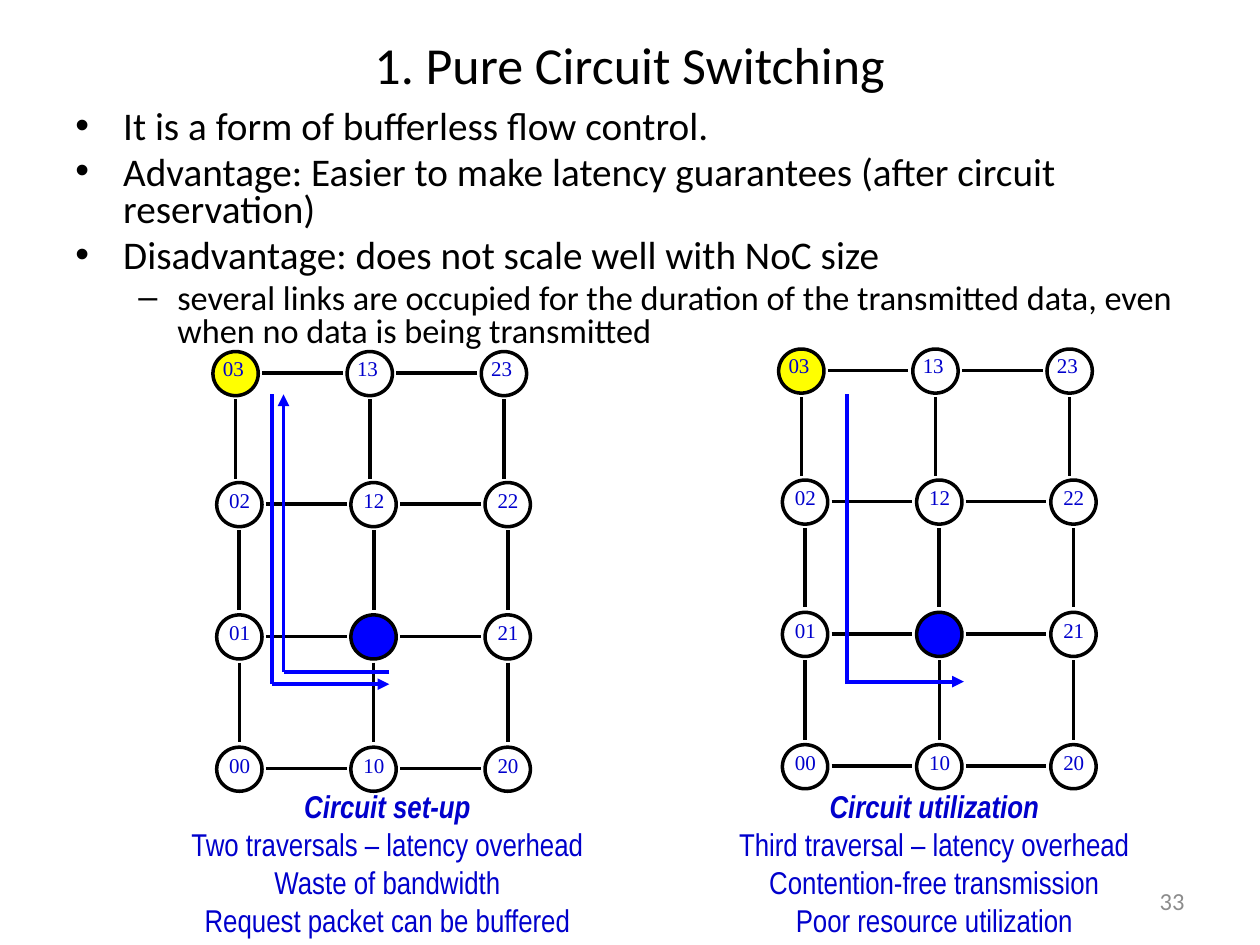
from dataclasses import dataclass

from lxml import etree
from pptx import Presentation
from pptx.dml.color import RGBColor
from pptx.enum.shapes import MSO_CONNECTOR, MSO_SHAPE
from pptx.enum.text import MSO_ANCHOR, PP_ALIGN
from pptx.oxml.ns import qn
from pptx.util import Inches, Pt

LINE, OVAL = MSO_CONNECTOR.STRAIGHT, MSO_SHAPE.OVAL
LEFT, CENTER, RIGHT = PP_ALIGN.LEFT, PP_ALIGN.CENTER, PP_ALIGN.RIGHT
TOP, MIDDLE = MSO_ANCHOR.TOP, MSO_ANCHOR.MIDDLE

BLACK = RGBColor(0x00, 0x00, 0x00)
GRAY = RGBColor(0x8C, 0x8C, 0x8C)
BLUE = RGBColor(0x00, 0x00, 0xFF)
TEXT_BLUE = RGBColor(0x00, 0x00, 0xCC)
YELLOW = RGBColor(0xFF, 0xFF, 0x00)

COLS, ROWS = 3, 4
COL_STEP, ROW_STEP = 1.065, 1.05
NODE_W, NODE_H = 0.36, 0.35
TOP_ROW_DX, TOP_ROW_DY = -0.03, 0.01
TARGET = "11"
NODE_FILLS = {"03": YELLOW, TARGET: BLUE}


@dataclass(frozen=True)
class Segment:
    x1: float
    y1: float
    x2: float
    y2: float
    arrow: bool = False


@dataclass(frozen=True)
class Mesh:
    left: float
    top: float
    routes: tuple[Segment, ...]
    caption_left: float
    caption: tuple[str, ...]


@dataclass(frozen=True)
class Bullet:
    text: str
    level: int = 0


@dataclass(frozen=True)
class BulletStyle:
    char: str
    size: float
    margin: float
    hanging: float


BULLET_STYLES = (BulletStyle("•", 22.4, 0.38, 0.38), BulletStyle("–", 19.6, 0.81, 0.31))

BULLETS = (
    Bullet("It is a form of bufferless flow control."),
    Bullet("Advantage: Easier to make latency guarantees (after circuit reservation)"),
    Bullet("Disadvantage: does not scale well with NoC size"),
    Bullet("several links are occupied for the duration of the transmitted data, "
           "even when no data is being transmitted", 1),
)

MESHES = (
    Mesh(1.72, 2.78,
         (Segment(2.16, 3.13, 2.16, 5.43), Segment(2.16, 5.43, 3.09, 5.43, True),
          Segment(3.09, 5.33, 2.25, 5.33), Segment(2.25, 5.33, 2.25, 3.13, True)),
         1.4, ("Circuit set-up", "Two traversals – latency overhead",
               "Waste of bandwidth", "Request packet can be buffered")),
    Mesh(6.21, 2.76,
         (Segment(6.72, 3.13, 6.72, 5.43), Segment(6.72, 5.41, 7.65, 5.41, True)),
         5.74, ("Circuit utilization", "Third traversal – latency overhead",
                "Contention-free transmission", "Poor resource utilization")),
)


def format_run(r, size: float, name: str, color: RGBColor) -> None:
    for key, value in {"size": Pt(size), "name": name}.items():
        setattr(r.font, key, value)
    r.font.color.rgb = color


def add_text(s, box, lines, size, name, color, align=LEFT, anchor=TOP, wrap=False):
    """Add a text box with one paragraph per line and return its frame."""
    tf = s.shapes.add_textbox(*map(Inches, box)).text_frame
    tf.word_wrap, tf.vertical_anchor = wrap, anchor
    for i, line in enumerate(lines):
        p = tf.paragraphs[0] if i == 0 else tf.add_paragraph()
        p.alignment = align
        r = p.add_run()
        r.text = line
        format_run(r, size, name, color)
    return tf


def add_line(s, seg: Segment, color: RGBColor, width: float) -> None:
    line = s.shapes.add_connector(LINE, *map(Inches, (seg.x1, seg.y1, seg.x2, seg.y2)))
    line.line.color.rgb = color
    line.line.width = Pt(width)
    if seg.arrow:
        etree.SubElement(line.line._get_or_add_ln(), qn("a:tailEnd"), type="triangle")
    etree.SubElement(line._element.spPr, qn("a:effectLst"))


def add_node(s, x: float, y: float, label: str) -> None:
    node = s.shapes.add_shape(OVAL, *map(Inches, (x, y, NODE_W, NODE_H)))
    node.shadow.inherit = False
    node.line.color.rgb = BLACK
    node.line.width = Pt(2)
    if label in NODE_FILLS:
        node.fill.solid()
        node.fill.fore_color.rgb = NODE_FILLS[label]
    else:
        node.fill.background()


def add_mesh(s, mesh: Mesh) -> None:
    labels = []
    for row in range(ROWS):
        dx, dy = (TOP_ROW_DX, TOP_ROW_DY) if row == 0 else (0, 0)
        y = mesh.top + row * ROW_STEP + dy
        for col in range(COLS):
            x = mesh.left + col * COL_STEP + dx
            label = f"{col}{ROWS - 1 - row}"
            add_node(s, x, y, label)
            if col < COLS - 1:
                add_line(s, Segment(x + 0.39, y + 0.17, x + 1.03, y + 0.17), BLACK, 2)
            if row < ROWS - 1:
                width = 2.25 if row == 1 else 2
                add_line(s, Segment(x + 0.18, y + 0.38, x + 0.18, y + 1.01), BLACK, width)
            if label != TARGET:
                labels.append((x - (0.02 if row == 0 else 0), y - 0.01 - dy, label))
    for x, y, label in labels:
        add_text(s, (x, y, 0.41, 0.38), [label], 12, "Times New Roman", TEXT_BLUE)
    for seg in mesh.routes:
        add_line(s, seg, BLUE, 2.25)
    tf = add_text(s, (mesh.caption_left, 6.2, 3.35, 1.31), mesh.caption, 18,
                  "Arial Narrow", TEXT_BLUE, CENTER)
    heading = tf.paragraphs[0].runs[0].font
    heading.bold = heading.italic = True


def add_title(s, text: str) -> None:
    title = s.shapes.title
    box = {"left": 0.5, "top": 0.3, "width": 9, "height": 0.53}
    for key, value in box.items():
        setattr(title, key, Inches(value))
    tf = title.text_frame
    tf.text = text
    tf.vertical_anchor = TOP
    p = tf.paragraphs[0]
    p.alignment, p.line_spacing = CENTER, 0.8
    format_run(p.runs[0], 29.7, "Calibri", BLACK)


def add_bullets(s) -> None:
    tf = add_text(s, (0.5, 0.83, 9, 2.08), [b.text for b in BULLETS], 22.4,
                  "Calibri", BLACK, wrap=True)
    for p, bullet in zip(tf.paragraphs, BULLETS):
        style = BULLET_STYLES[bullet.level]
        p.level, p.line_spacing = bullet.level, 0.8
        p.space_before = Pt(round(style.size * 0.2, 1))
        p.runs[0].font.size = Pt(style.size)
        pPr = p._p.get_or_add_pPr()
        pPr.set("marL", str(Inches(style.margin)))
        pPr.set("indent", str(-Inches(style.hanging)))
        etree.SubElement(pPr, qn("a:buFont"), typeface="Arial")
        etree.SubElement(pPr, qn("a:buChar"), char=style.char)


def main() -> None:
    prs = Presentation()
    prs.slide_width, prs.slide_height = Inches(10), Inches(7.5)
    s = prs.slides.add_slide(prs.slide_layouts[5])
    add_text(s, (7.17, 6.95, 2.33, 0.4), ["33"], 14, "Calibri", GRAY, RIGHT, MIDDLE, True)
    add_title(s, "1. Pure Circuit Switching")
    add_bullets(s)
    for mesh in MESHES:
        add_mesh(s, mesh)
    prs.save("out.pptx")


if __name__ == "__main__":
    main()
